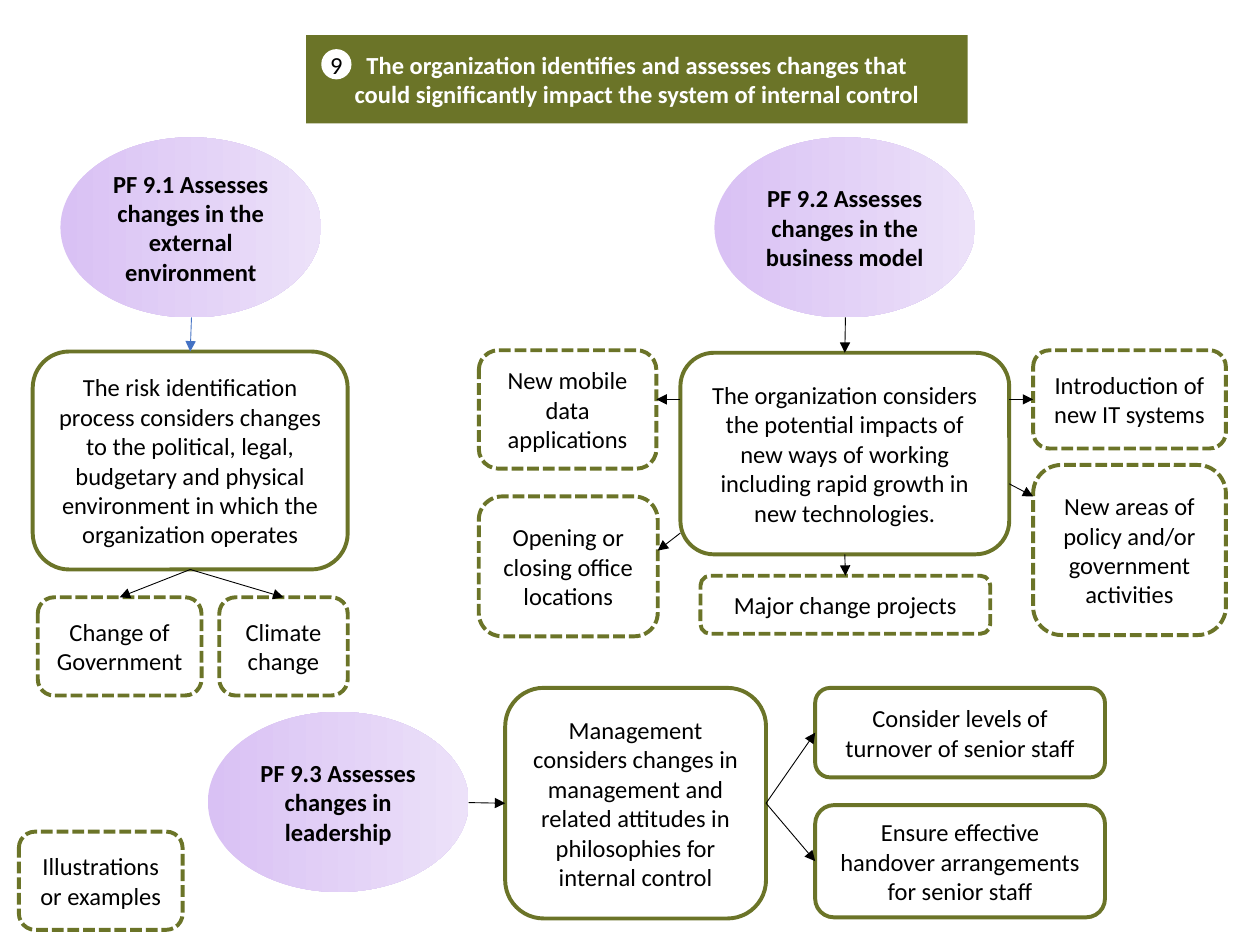
from lxml.etree import SubElement
from pptx import Presentation
from pptx.dml.color import RGBColor
from pptx.enum.dml import MSO_LINE
from pptx.enum.shapes import MSO_CONNECTOR, MSO_SHAPE
from pptx.enum.text import MSO_ANCHOR, PP_ALIGN
from pptx.oxml.ns import qn
from pptx.util import Pt

PX = 9144  # EMU per px, 100 px to the inch
TOP, LEFT, BOTTOM, RIGHT = range(4)


class Theme:
    olive = RGBColor.from_string("6B7428")
    white = RGBColor.from_string("FFFFFF")
    black = RGBColor.from_string("000000")
    blue = RGBColor.from_string("4472C4")
    lilac = [RGBColor.from_string(c) for c in ("D9C1F4", "ECE1F9")]
    font = {"name": "Calibri", "size": Pt(14)}
    edge = Pt(2.25)
    arrow = Pt(0.5)


def assign(obj, values):
    for name, value in values.items():
        setattr(obj, name, value)


def add_part(slide, box, kind, at, text, color=Theme.black, bold=False):
    """Add a plain shape with centred text, at px relative to the box."""
    x, y, w, h = at
    part = slide.shapes.add_shape(
        kind, (box[0] + x) * PX, (box[1] + y) * PX, w * PX, h * PX)
    part.shadow.inherit = False
    part.line.fill.background()
    frame = part.text_frame
    assign(frame, {"text": text, "word_wrap": True,
                   "vertical_anchor": MSO_ANCHOR.MIDDLE})
    para = frame.paragraphs[0]
    para.alignment = PP_ALIGN.CENTER
    for run in para.runs:
        assign(run.font, {**Theme.font, "bold": bold})
        run.font.color.rgb = color
    return part


def paint(part, color):
    part.fill.solid()
    part.fill.fore_color.rgb = color


def add_oval(slide, box, at, text):
    oval = add_part(slide, box, MSO_SHAPE.OVAL, at, text, bold=True)
    oval.fill.gradient()
    oval.fill.gradient_angle = 0
    for stop, color in zip(oval.fill.gradient_stops, Theme.lilac):
        stop.color.rgb = color
    return oval


def add_card(slide, box, at, text, dashed=False):
    card = add_part(slide, box, MSO_SHAPE.ROUNDED_RECTANGLE, at, text)
    paint(card, Theme.white)
    card.line.color.rgb = Theme.olive
    card.line.width = Theme.edge
    if dashed:
        card.line.dash_style = MSO_LINE.SQUARE_DOT
    return card


def add_arrow(slide, box, start, end, color=Theme.black):
    """Each end is an (x, y) point in the box or a (card, side) pair."""
    spots = []
    for spot in (start, end):
        free = isinstance(spot[0], int)
        spots += [(box[i] + spot[i]) * PX if free else 0 for i in (0, 1)]
    arrow = slide.shapes.add_connector(MSO_CONNECTOR.STRAIGHT, *spots)
    for spot, join in ((start, arrow.begin_connect), (end, arrow.end_connect)):
        if not isinstance(spot[0], int):
            join(*spot)
    arrow.line.color.rgb = color
    arrow.line.width = Theme.arrow
    SubElement(arrow.line._get_or_add_ln(), qn("a:tailEnd"), type="triangle")
    SubElement(arrow._element.spPr, qn("a:effectLst"))


def add_title(slide, box):
    banner = add_part(
        slide, box, MSO_SHAPE.RECTANGLE, (0, 0, 525, 70),
        "The organization identifies and assesses changes that\v"
        "could significantly impact the system of internal control",
        Theme.white, bold=True)
    paint(banner, Theme.olive)
    badge = add_part(slide, box, MSO_SHAPE.OVAL, (12, 11, 24, 24), "9")
    paint(badge, Theme.white)
    assign(badge.text_frame, {
        "margin_left": 0, "margin_right": 0, "margin_top": 0,
        "margin_bottom": 0, "word_wrap": False})


def add_leaders(slide, box):
    add_oval(slide, box, (0, 19, 207, 143),
             "PF 9.3 Assesses changes in leadership")
    core = add_card(
        slide, box, (236, 0, 207, 183),
        "Management considers changes in management and related attitudes "
        "in philosophies for internal control")
    add_arrow(slide, box, (207, 91), (core, LEFT))
    for y, h, text in (
            (0, 71, "Consider levels of turnover of senior staff"),
            (93, 89, "Ensure effective handover arrangements "
                     "for senior staff")):
        step = add_card(slide, box, (482, y, 230, h), text)
        add_arrow(slide, box, (core, RIGHT), (step, LEFT))


def add_model(slide, box):
    add_oval(slide, box, (187, 0, 207, 143),
             "PF 9.2 Assesses changes in the business model")
    core = add_card(
        slide, box, (160, 171, 261, 160),
        "The organization considers the potential impacts of new ways of "
        "working including rapid growth in new technologies.")
    # Examples around the core
    cards = [add_card(slide, box, at, text, dashed=True) for at, text in (
        ((176, 348, 230, 46), "Major change projects"),
        ((440, 169, 153, 78), "Introduction of new IT systems"),
        ((440, 260, 153, 135),
         "New areas of policy and/or government activities"),
        ((0, 169, 141, 94), "New mobile data applications"),
        ((0, 285, 142, 111), "Opening or closing office locations"))]
    for start, end in (
            ((291, 143), (core, TOP)),
            ((core, BOTTOM), (cards[0], TOP)),
            ((421, 208), (cards[1], LEFT)),
            ((421, 275), (440, 285)),
            ((160, 208), (141, 208)),
            ((160, 314), (142, 328))):
        add_arrow(slide, box, start, end)


def add_outside(slide, box):
    add_oval(slide, box, (22, 0, 207, 143),
             "PF 9.1 Assesses changes in the external environment")
    core = add_card(
        slide, box, (0, 170, 250, 173),
        "The risk identification process considers changes to the "
        "political, legal, budgetary and physical environment in which "
        "the organization operates")
    add_arrow(slide, box, (126, 143), (core, TOP), Theme.blue)
    for x, w, text in ((4, 130, "Change of Government"),
                       (148, 102, "Climate change")):
        card = add_card(slide, box, (x, 365, w, 78), text, dashed=True)
        add_arrow(slide, box, (core, BOTTOM), (card, TOP))


def add_legend(slide, box):
    add_card(slide, box, (0, 0, 130, 78), "Illustrations or examples",
             dashed=True)


def main():
    deck = Presentation()
    assign(deck, {"slide_width": 1000 * PX, "slide_height": 750 * PX})
    slide = deck.slides.add_slide(deck.slide_layouts[6])
    add_title(slide, (243, 28))
    add_leaders(slide, (165, 546))
    add_model(slide, (380, 109))
    add_outside(slide, (26, 109))
    add_legend(slide, (15, 660))
    deck.save("out.pptx")


if __name__ == "__main__":
    main()
